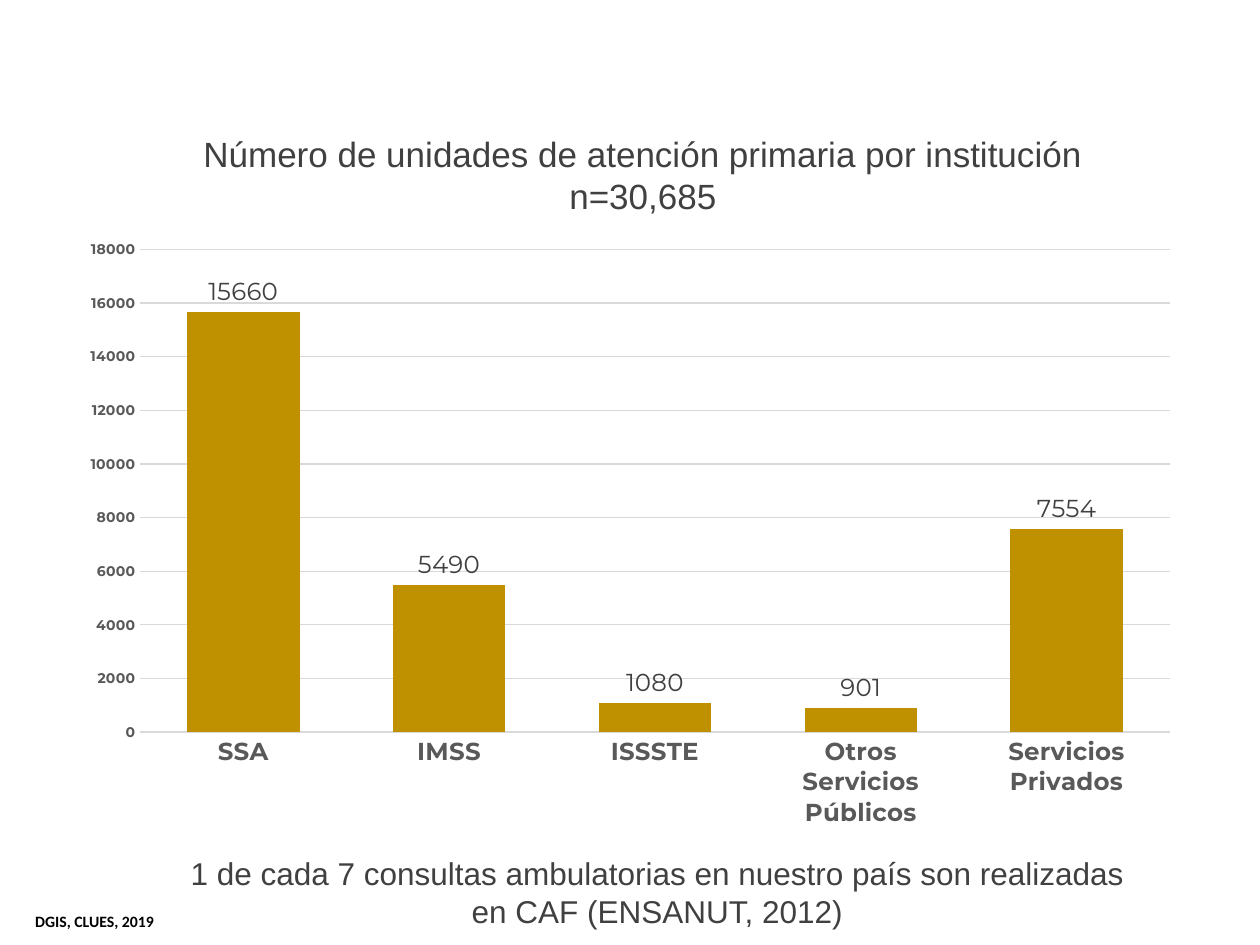
from pptx import Presentation
from pptx.chart.data import CategoryChartData
from pptx.dml.color import RGBColor
from pptx.enum.chart import XL_CHART_TYPE, XL_LABEL_POSITION, XL_TICK_MARK
from pptx.enum.text import MSO_ANCHOR, MSO_AUTO_SIZE, PP_ALIGN
from pptx.util import Cm, Pt

COLUMN = XL_CHART_TYPE.COLUMN_CLUSTERED
OUT_END = XL_LABEL_POSITION.OUTSIDE_END
NO_TICK = XL_TICK_MARK.NONE
TOP = MSO_ANCHOR.TOP
NO_FIT = MSO_AUTO_SIZE.NONE
LEFT, CENTER = PP_ALIGN.LEFT, PP_ALIGN.CENTER

THEME = {
    "bar": RGBColor(0xBF, 0x90, 0x00),
    "grid": RGBColor(0xD9, 0xD9, 0xD9),
    "title": {"name": "Arial", "size": Pt(20), "bold": False, "color": "404040"},
    "note": {"name": "Arial", "size": Pt(18), "bold": False, "color": "404040"},
    "source": {"name": "Calibri", "size": Pt(9), "bold": True, "color": "000000"},
    "chart": {"name": "Montserrat", "size": Pt(8), "bold": False, "color": "000000"},
    "cats": {"name": "Montserrat", "size": Pt(14), "bold": True, "color": "595959"},
    "scale": {"name": "Montserrat", "size": Pt(8), "bold": True, "color": "595959"},
    "labels": {"name": "Montserrat", "size": Pt(14), "bold": False, "color": "404040"},
}


def style(font, key):
    """Apply the theme's type format to a font."""
    for name, value in THEME[key].items():
        if name == "color":
            font.color.rgb = RGBColor.from_string(value)
        else:
            setattr(font, name, value)


def write(box, text, key, align, wrap):
    frame = box.text_frame
    form = {"text": text, "word_wrap": wrap, "auto_size": NO_FIT,
            "vertical_anchor": TOP}
    for name, value in form.items():
        setattr(frame, name, value)
    line = frame.paragraphs[0]
    line.alignment = align
    style(line.font, key)


deck = Presentation()
deck.slide_width, deck.slide_height = Cm(25.4), Cm(19.05)
slide = deck.slides.add_slide(deck.slide_layouts[5])

# Title
title = slide.shapes.title
place = {"left": Cm(3.78), "top": Cm(2.54), "width": Cm(18.36), "height": Cm(1.96)}
for name, value in place.items():
    setattr(title, name, value)
write(title, "Número de unidades de atención primaria por institución\vn=30,685",
      "title", CENTER, False)

# Chart
units = {
    "SSA": 15660,
    "IMSS": 5490,
    "ISSSTE": 1080,
    "Otros Servicios Públicos": 901,
    "Servicios Privados": 7554,
}
data = CategoryChartData()
data.categories = list(units)
data.add_series("Unidades", list(units.values()))
chart = slide.shapes.add_chart(
    COLUMN, Cm(1.37), Cm(4.78), Cm(22.66), Cm(12.34), data).chart
chart.has_legend = chart.has_title = False
style(chart.font, "chart")

plot = chart.plots[0]
form = {"gap_width": 83, "overlap": -27, "vary_by_categories": False,
        "has_data_labels": True}
for name, value in form.items():
    setattr(plot, name, value)
fill = plot.series[0].format.fill
fill.solid()
fill.fore_color.rgb = THEME["bar"]
labels = plot.data_labels
labels.show_value = True
labels.position = OUT_END
style(labels.font, "labels")

cats, scale = chart.category_axis, chart.value_axis
for axis, key in ((cats, "cats"), (scale, "scale")):
    axis.major_tick_mark = axis.minor_tick_mark = NO_TICK
    style(axis.tick_labels.font, key)
scale.minimum_scale, scale.maximum_scale, scale.major_unit = 0, 18000, 2000
scale.has_major_gridlines = True
scale.format.line.fill.background()
for line in (cats.format.line, scale.major_gridlines.format.line):
    line.color.rgb = THEME["grid"]
    line.width = Pt(0.75)

# Note and source
notes = (
    ("1 de cada 7 consultas ambulatorias en nuestro país son realizadas "
     "en CAF (ENSANUT, 2012)", "note", CENTER, True,
     (3.38, 17.09, 19.74, 1.8)),
    ("DGIS, CLUES, 2019", "source", LEFT, False, (0.46, 18.26, 2.92, 0.64)),
)
for text, key, align, wrap, spot in notes:
    box = slide.shapes.add_textbox(*map(Cm, spot))
    write(box, text, key, align, wrap)

deck.save("out.pptx")
